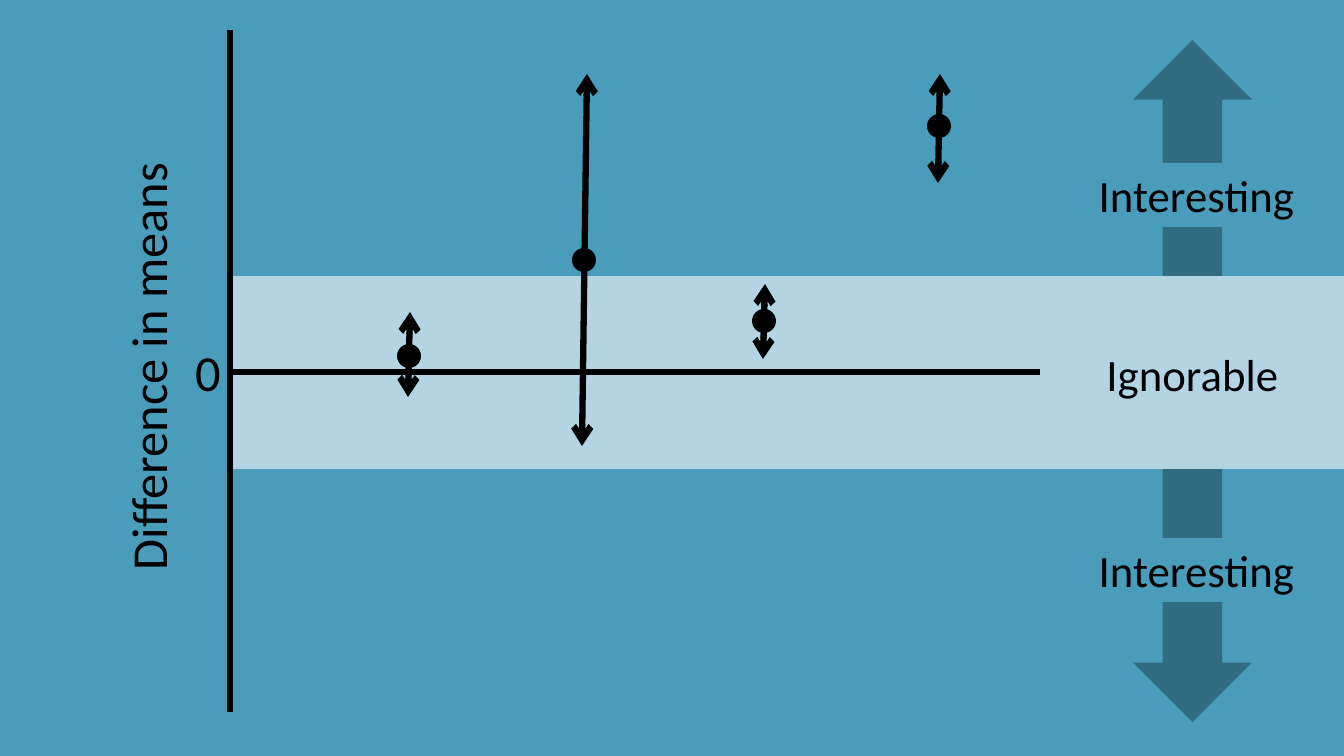
from pptx import Presentation
from pptx.dml.color import RGBColor
from pptx.enum.shapes import MSO_CONNECTOR, MSO_SHAPE
from pptx.enum.text import MSO_ANCHOR, PP_ALIGN
from pptx.oxml.ns import qn
from pptx.util import Pt
from lxml.etree import SubElement

SCALE = 914400 / 100.8
BLUE, DARK, PALE, BLACK = "4A9CBB", "316C83", "B3D5E3", "000000"
RANGES = [
    ((408, 397), (410, 312), (409, 356)),
    ((582, 446), (587, 74), (584, 260)),
    ((763, 359), (765, 284), (764, 321)),
    ((938, 183), (940, 74), (939, 126)),
]


def emu(*sizes):
    """Turn px into EMU."""
    return [round(size * SCALE) for size in sizes]


def paint(fill, color):
    """Set a solid fill from a hex string."""
    fill.solid()
    fill.fore_color.rgb = RGBColor.from_string(color)


def add_form(slide, kind, box, color, turn=0):
    """Add a plain filled shape."""
    form = slide.shapes.add_shape(kind, *emu(*box))
    form.shadow.inherit = False
    form.rotation = turn
    paint(form.fill, color)
    form.line.fill.background()
    return form


def add_line(slide, start, end, heads=False):
    """Add a thick black line, with arrowheads at both ends if asked."""
    line = slide.shapes.add_connector(MSO_CONNECTOR.STRAIGHT, *emu(*start, *end))
    line.line.width = Pt(4.5)
    paint(line.line.fill, BLACK)
    props = line.line._get_or_add_ln()
    if heads:
        for tag in ("a:headEnd", "a:tailEnd"):
            SubElement(props, qn(tag), type="arrow")
    SubElement(props.getparent(), qn("a:effectLst"))


def write(shape, words, size):
    """Write one centred line of text in a shape."""
    frame = shape.text_frame
    frame.word_wrap = False
    frame.vertical_anchor = MSO_ANCHOR.MIDDLE
    para = frame.paragraphs[0]
    para.text = words
    para.alignment = PP_ALIGN.CENTER
    para.font.name = "Calibri"
    para.font.size = Pt(size)
    paint(para.font.fill, BLACK)


def add_label(slide, box, words, size, turn=0):
    """Add a text box with one label."""
    label = slide.shapes.add_textbox(*emu(*box))
    label.rotation = turn
    write(label, words, size)


def add_range(slide, low, high, mean):
    """Add an interval arrow with a dot at its mean."""
    add_line(slide, low, high, heads=True)
    add_form(slide, MSO_SHAPE.OVAL, (mean[0] - 12, mean[1] - 12, 24, 24), BLACK)


def main():
    """Build the slide and save it."""
    deck = Presentation()
    deck.slide_width, deck.slide_height = emu(1344, 756)
    slide = deck.slides.add_slide(deck.slide_layouts[6])

    add_form(slide, MSO_SHAPE.RECTANGLE, (0, 0, 1344, 756), BLUE)
    add_form(slide, MSO_SHAPE.RIGHT_ARROW, (1024, 149, 337, 119), DARK, 270)
    add_form(slide, MSO_SHAPE.RIGHT_ARROW, (1022, 492, 341, 119), DARK, 90)
    add_form(slide, MSO_SHAPE.RECTANGLE, (229, 276, 1115, 193), PALE)
    add_line(slide, (232, 372), (1040, 372))
    add_line(slide, (230, 712), (230, 30))

    for top in (163, 538):
        plate = add_form(slide, MSO_SHAPE.RECTANGLE, (1088, top, 217, 64), BLUE)
        write(plate, "Interesting", 32)
    add_label(slide, (1095, 342, 195, 64), "Ignorable", 32)
    add_label(slide, (-69, 331, 432, 71), "Difference in means", 36, 270)
    add_label(slide, (185, 336, 46, 71), "0", 36)

    for low, high, mean in RANGES:
        add_range(slide, low, high, mean)
    deck.save("out.pptx")


if __name__ == "__main__":
    main()
